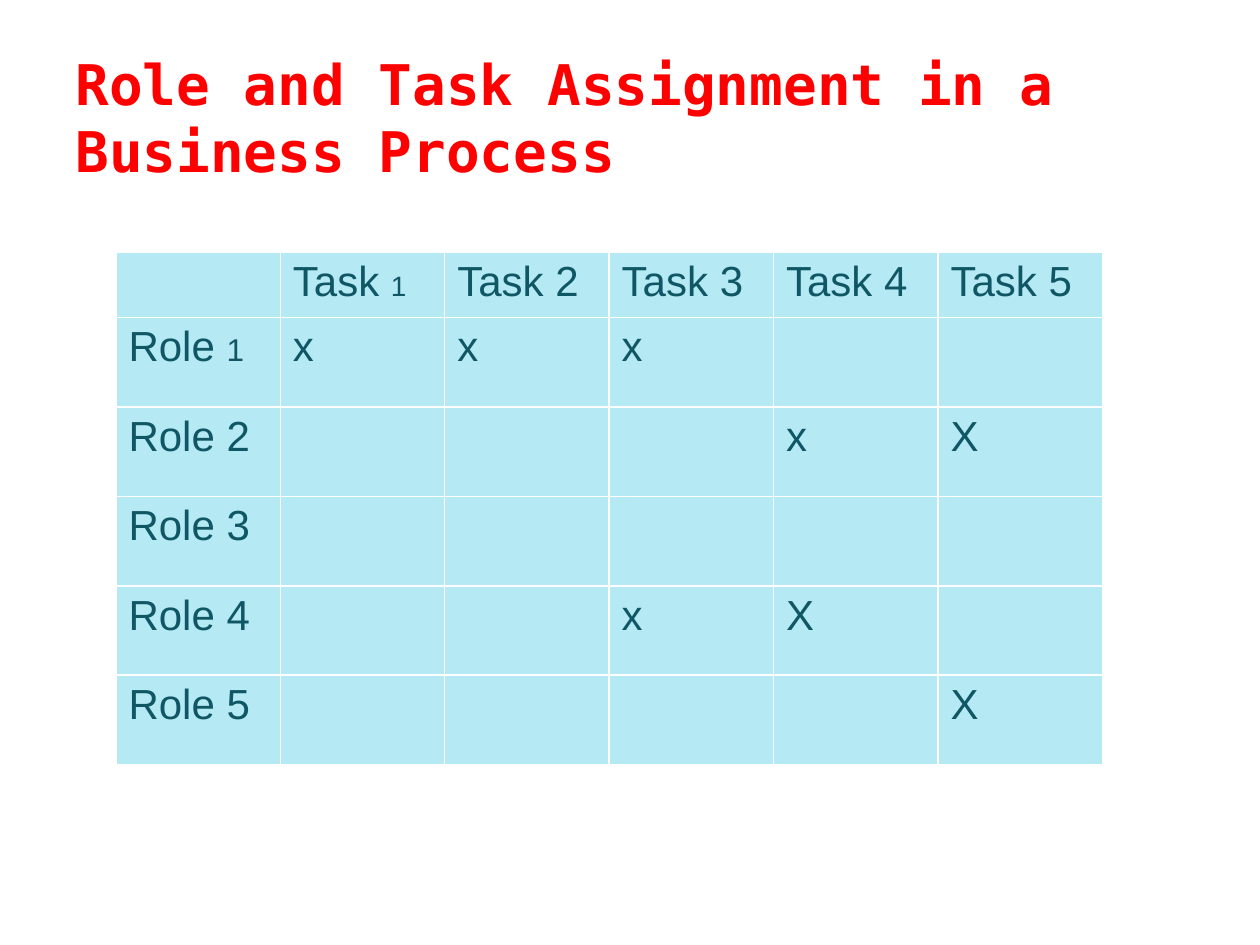
from dataclasses import dataclass

from lxml.etree import SubElement
from pptx import Presentation
from pptx.dml.color import RGBColor
from pptx.enum.text import MSO_ANCHOR
from pptx.oxml.ns import qn
from pptx.util import Inches, Pt


@dataclass(frozen=True)
class Theme:
    title_font: str = "DejaVu Sans Mono"
    body_font: str = "Arial"
    title_color: str = "FF0000"
    text_color: str = "105766"
    cell_color: str = "B5E9F4"
    border_color: str = "FFFFFF"
    title_size: int = 32
    body_size: int = 24
    role_number_size: int = 18
    task_number_size: int = 16
    border_width: int = 1


THEME = Theme()

ASSIGNMENTS = [
    ["", "Task 1", "Task 2", "Task 3", "Task 4", "Task 5"],
    ["Role 1", "x", "x", "x", "", ""],
    ["Role 2", "", "", "", "x", "X"],
    ["Role 3", "", "", "", "", ""],
    ["Role 4", "", "", "x", "X", ""],
    ["Role 5", "", "", "", "", "X"],
]
# Labels whose number is set smaller than the word
NUMBER_SIZES = {"Task 1": THEME.task_number_size, "Role 1": THEME.role_number_size}


def add_text(paragraph, text, *, size=THEME.body_size, font=THEME.body_font,
             color=THEME.text_color, bold=False):
    run = paragraph.add_run()
    run.text = text
    run.font.size = Pt(size)
    run.font.name = font
    run.font.bold = bold
    run.font.color.rgb = RGBColor.from_string(color)


def set_borders(cell):
    properties = cell._tc.get_or_add_tcPr()
    for index, side in enumerate(("lnL", "lnR", "lnT", "lnB")):
        line = properties.makeelement(qn(f"a:{side}"), {"w": str(Pt(THEME.border_width))})
        fill = SubElement(line, qn("a:solidFill"))
        SubElement(fill, qn("a:srgbClr"), val=THEME.border_color)
        properties.insert(index, line)


def add_title(slide, text, left, top, width, height):
    frame = slide.shapes.add_textbox(left, top, width, height).text_frame
    frame.word_wrap = True
    frame.vertical_anchor = MSO_ANCHOR.MIDDLE
    add_text(frame.paragraphs[0], text, size=THEME.title_size,
             font=THEME.title_font, color=THEME.title_color, bold=True)


def fill_cell(cell, label):
    cell.fill.solid()
    cell.fill.fore_color.rgb = RGBColor.from_string(THEME.cell_color)
    set_borders(cell)
    if not label:
        return
    paragraph = cell.text_frame.paragraphs[0]
    if label in NUMBER_SIZES:
        word, number = label.split()
        add_text(paragraph, word + " ")
        add_text(paragraph, number, size=NUMBER_SIZES[label])
    else:
        add_text(paragraph, label)


def add_assignment_table(slide, rows, left, top, width, height, header_height):
    row_count, column_count = len(rows), len(rows[0])
    table = slide.shapes.add_table(row_count, column_count, left, top, width, height).table
    table.first_row = table.horz_banding = False
    for column in table.columns:
        column.width = width // column_count
    for index, row in enumerate(table.rows):
        row.height = (height - header_height) // (row_count - 1) if index else header_height
        for cell, label in zip(row.cells, rows[index]):
            fill_cell(cell, label)


def main():
    presentation = Presentation()
    presentation.slide_width = Inches(10)
    presentation.slide_height = Inches(7.5)
    slide = presentation.slides.add_slide(presentation.slide_layouts[6])

    # Role by task matrix
    add_assignment_table(slide, ASSIGNMENTS, Inches(0.92), Inches(2),
                         Inches(7.83), Inches(4.07), header_height=Inches(0.52))

    # Title
    add_title(slide, "Role and Task Assignment in a Business Process",
              Inches(0.5), Inches(0.3), Inches(9), Inches(1.25))

    presentation.save("out.pptx")


if __name__ == "__main__":
    main()
